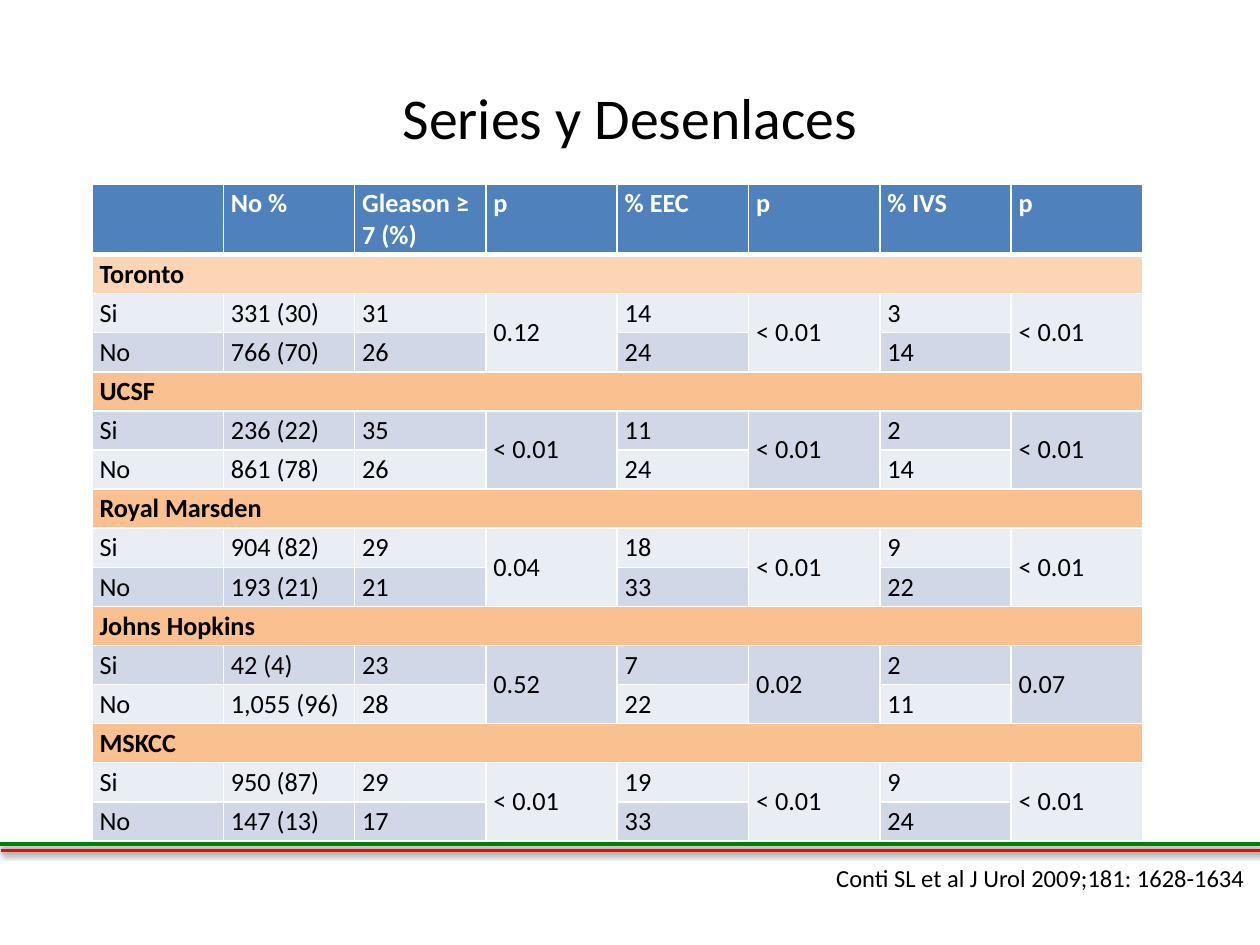
from dataclasses import dataclass

from lxml import etree
from pptx import Presentation
from pptx.dml.color import RGBColor
from pptx.enum.shapes import MSO_CONNECTOR
from pptx.enum.text import MSO_ANCHOR, PP_ALIGN
from pptx.oxml.ns import qn
from pptx.util import Inches, Pt

STRAIGHT = MSO_CONNECTOR.STRAIGHT
TOP, MIDDLE = MSO_ANCHOR.TOP, MSO_ANCHOR.MIDDLE
LEFT, CENTER = PP_ALIGN.LEFT, PP_ALIGN.CENTER


@dataclass(frozen=True)
class Theme:
    font: str = "Calibri"
    black: str = "000000"
    white: str = "FFFFFF"
    green: str = "008000"
    red: str = "FF0000"
    head: str = "4F81BD"
    pale: str = "E9EDF4"
    dark: str = "D0D8E8"
    peach: str = "FCD5B5"
    orange: str = "FAC090"
    title: int = 33
    body: int = 15
    cite: int = 14


@dataclass(frozen=True)
class Series:
    name: str
    tint: str
    yes: tuple  # No %, Gleason, EEC, IVS
    no: tuple
    p: tuple  # Gleason, EEC, IVS


@dataclass(frozen=True)
class Label:
    text: str
    box: tuple
    size: int


@dataclass(frozen=True)
class Rule:
    left: float
    top: float
    color: str


T = Theme()
HEADS = ("", "No %", "Gleason ≥ 7 (%)", "p", "% EEC", "p", "% IVS", "p")
DATA_COLS = (1, 2, 4, 6)
P_COLS = (3, 5, 7)
LOW = "< 0.01"
GROUPS = (
    Series("Toronto", T.peach, ("331 (30)", "31", "14", "3"),
           ("766 (70)", "26", "24", "14"), ("0.12", LOW, LOW)),
    Series("UCSF", T.orange, ("236 (22)", "35", "11", "2"),
           ("861 (78)", "26", "24", "14"), (LOW, LOW, LOW)),
    Series("Royal Marsden", T.orange, ("904 (82)", "29", "18", "9"),
           ("193 (21)", "21", "33", "22"), ("0.04", LOW, LOW)),
    Series("Johns Hopkins", T.orange, ("42 (4)", "23", "7", "2"),
           ("1,055 (96)", "28", "22", "11"), ("0.52", "0.02", "0.07")),
    Series("MSKCC", T.orange, ("950 (87)", "29", "19", "9"),
           ("147 (13)", "17", "33", "24"), (LOW, LOW, LOW)),
)
RULES = (Rule(0, 6.7, T.green), Rule(0.01, 6.75, T.red))
LABELS = (
    Label("Series y Desenlaces", (0.5, 0.3, 9, 1.25), T.title),
    Label("Conti SL et al J Urol 2009;181: 1628-1634 ",
          (6.38, 6.77, 3.8, 0.39), T.cite),
)
CELL_PADS = {"margin_left": Inches(0.06), "margin_right": Inches(0.06),
             "margin_top": Inches(0.03), "margin_bottom": Inches(0.03)}


def apply(item, form: dict) -> None:
    for key, val in form.items():
        setattr(item, key, val)


def write(frame, text: str, size: int, color: str = T.black,
          bold: bool = False, align=LEFT) -> None:
    line = frame.paragraphs[0]
    line.alignment = align
    run = line.add_run()
    run.text = text
    apply(run.font, {"name": T.font, "size": Pt(size), "bold": bold})
    run.font.color.rgb = RGBColor.from_string(color)


def add_tint(node, color: str):
    return etree.SubElement(node, qn("a:srgbClr"), val=color)


def draw_rule(slide, rule: Rule) -> None:
    y = Inches(rule.top)
    line = slide.shapes.add_connector(
        STRAIGHT, Inches(rule.left), y, Inches(rule.left + 10), y)
    line.line.width = Pt(2)
    line.line.color.rgb = RGBColor.from_string(rule.color)
    glow = etree.SubElement(line._element.spPr, qn("a:effectLst"))
    shade = etree.SubElement(
        glow, qn("a:outerShdw"), blurRad=str(Pt(3.1)), dist=str(Pt(1.6)),
        dir="5400000", rotWithShape="0")
    etree.SubElement(add_tint(shade, T.black), qn("a:alpha"), val="38000")


def draw_label(slide, label: Label) -> None:
    box = slide.shapes.add_textbox(*map(Inches, label.box))
    apply(box.text_frame, {"word_wrap": True, "vertical_anchor": MIDDLE})
    write(box.text_frame, label.text, label.size, align=CENTER)


def style_cell(cell, fill: str, over: int = 1, under: int = 1) -> None:
    apply(cell, CELL_PADS)
    props = cell._tc.get_or_add_tcPr()
    for side, width in zip("LRTB", (1, 1, over, under)):
        edge = etree.SubElement(props, qn(f"a:ln{side}"), w=str(Pt(width)))
        add_tint(etree.SubElement(edge, qn("a:solidFill")), T.white)
    cell.fill.solid()
    cell.fill.fore_color.rgb = RGBColor.from_string(fill)


def fill_group(table, top: int, group: Series, fills: tuple) -> None:
    # Band with the name of the series
    for col in range(len(HEADS)):
        style_cell(table.cell(top, col), group.tint, over=3 if top == 1 else 1)
    band = table.cell(top, 0)
    band.merge(table.cell(top, len(HEADS) - 1))
    band.vertical_anchor = MIDDLE
    write(band.text_frame, group.name, T.body, bold=True)

    # Yes and no rows
    pairs = (("Si", group.yes), ("No", group.no))
    for row, ((name, vals), fill) in enumerate(zip(pairs, fills), top + 1):
        for col in range(len(HEADS)):
            style_cell(table.cell(row, col), fills[0] if col in P_COLS else fill)
        for col, text in zip((0, *DATA_COLS), (name, *vals)):
            write(table.cell(row, col).text_frame, text, T.body)

    # Shared p values
    for col, text in zip(P_COLS, group.p):
        cell = table.cell(top + 1, col)
        cell.merge(table.cell(top + 2, col))
        cell.vertical_anchor = MIDDLE
        write(cell.text_frame, text, T.body)


def draw_table(slide) -> None:
    count = 1 + 3 * len(GROUPS)
    table = slide.shapes.add_table(
        count, len(HEADS), Inches(0.73), Inches(1.46),
        Inches(8.34), Inches(5.14)).table
    table.horz_banding = False
    for col in table.columns:
        col.width = Inches(8.34 / len(HEADS))
    for i, row in enumerate(table.rows):
        row.height = Inches(0.3 if i else 0.55)

    # Header row
    for col, text in enumerate(HEADS):
        cell = table.cell(0, col)
        style_cell(cell, T.head, under=3)
        cell.vertical_anchor = TOP
        if text:
            write(cell.text_frame, text, T.body, T.white, bold=True)

    # Stripes swap from one series to the next
    for i, group in enumerate(GROUPS):
        fills = (T.dark, T.pale) if i % 2 else (T.pale, T.dark)
        fill_group(table, 1 + 3 * i, group, fills)


def main() -> None:
    deck = Presentation()
    apply(deck, {"slide_width": Inches(10), "slide_height": Inches(7.5)})
    slide = deck.slides.add_slide(deck.slide_layouts[6])
    for rule in RULES:
        draw_rule(slide, rule)
    title, cite = LABELS
    draw_label(slide, title)
    draw_table(slide)
    draw_label(slide, cite)
    deck.save("out.pptx")


if __name__ == "__main__":
    main()
